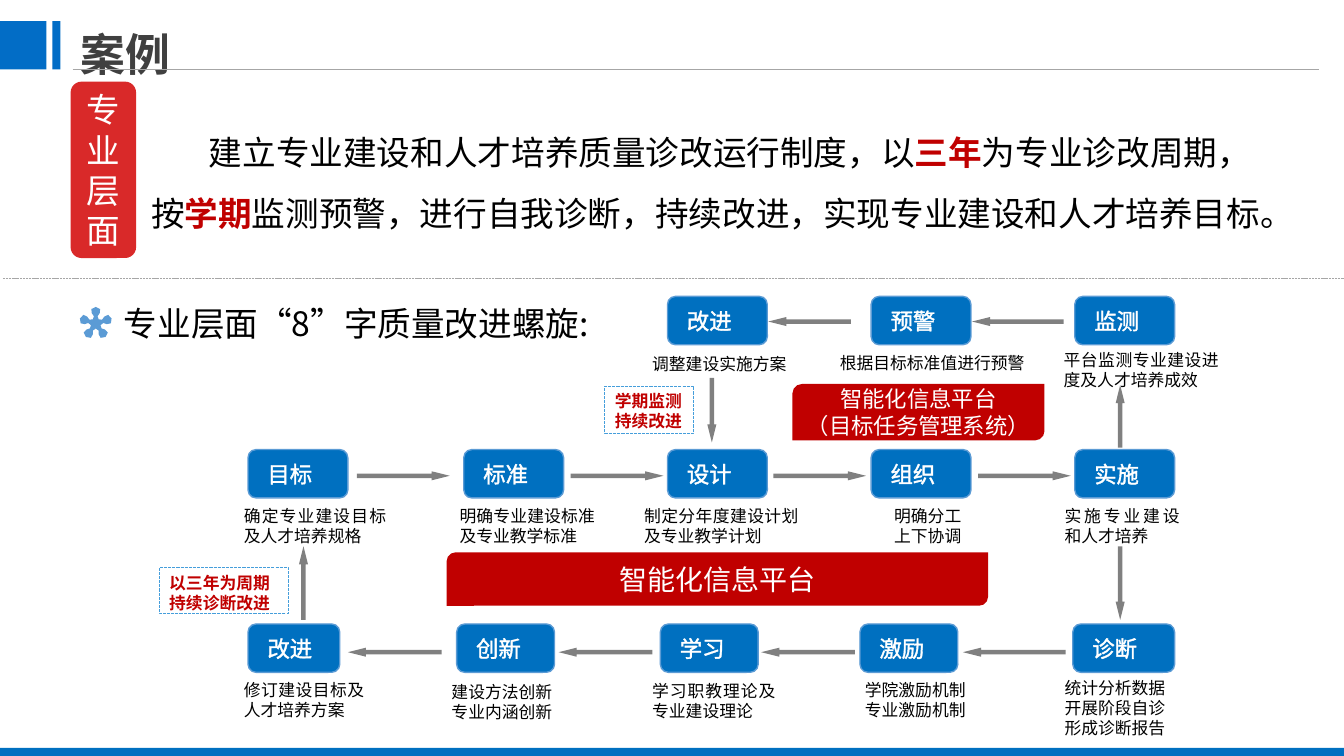
import math

import lxml.etree
import pptx
import pptx.dml.color
import pptx.enum.dml
import pptx.enum.shapes
import pptx.enum.text
import pptx.oxml.ns
import pptx.util

WIDTH, HEIGHT = 13.33, 7.5
FONT = "Noto Sans CJK SC"
COLORS = {
    "bar": "026DC6", "blue": "0070C0", "edge": "5B9BD5", "dash": "459EDB",
    "red": "C00000", "label": "D92929", "arrow": "808080", "rule": "A6A6A6",
    "title": "404040", "black": "000000", "white": "FFFFFF",
}
SHAPES = pptx.enum.shapes.MSO_SHAPE
ALIGN = pptx.enum.text.PP_ALIGN
ANCHOR = pptx.enum.text.MSO_ANCHOR
DASH = pptx.enum.dml.MSO_LINE.SQUARE_DOT
ARROWS = {"left": SHAPES.LEFT_ARROW, "right": SHAPES.RIGHT_ARROW,
          "up": SHAPES.UP_ARROW, "down": SHAPES.DOWN_ARROW}
COLUMN = 2.02
STEP_HEIGHT = 0.48


def color(name):
    return pptx.dml.color.RGBColor.from_string(COLORS[name])


def inches(values):
    return [pptx.util.Inches(value) for value in values]


def write(shape, paragraphs, size=12, fill="black", bold=False, align=None, anchor=ANCHOR.TOP,
          inset=(0.1, 0.05), wrap=True, spacing=None, indent=None, outline=None):
    frame = shape.text_frame
    frame.word_wrap = wrap
    frame.auto_size = pptx.enum.text.MSO_AUTO_SIZE.NONE
    frame.vertical_anchor = anchor
    frame.margin_left = frame.margin_right = pptx.util.Inches(inset[0])
    frame.margin_top = frame.margin_bottom = pptx.util.Inches(inset[1])
    for index, spans in enumerate(paragraphs):
        para = frame.add_paragraph() if index else frame.paragraphs[0]
        para.alignment = align
        para.line_spacing = spacing
        if indent:
            para._p.get_or_add_pPr().set("indent", str(pptx.util.Inches(indent)))
        for part in [spans] if isinstance(spans, str) else spans:
            text, strong = (part, False) if isinstance(part, str) else part
            span = para.add_run()
            span.text = text
            span.font.size = pptx.util.Pt(size)
            span.font.name = FONT
            span.font.bold = bold or strong
            span.font.color.rgb = color("red" if strong else fill)
            properties = span._r.get_or_add_rPr()
            east = lxml.etree.Element(pptx.oxml.ns.qn("a:ea"), typeface=FONT)
            properties.find(pptx.oxml.ns.qn("a:latin")).addnext(east)
            if outline:
                line = lxml.etree.Element(pptx.oxml.ns.qn("a:ln"), w=str(pptx.util.Pt(outline)))
                solid = lxml.etree.SubElement(line, pptx.oxml.ns.qn("a:solidFill"))
                lxml.etree.SubElement(solid, pptx.oxml.ns.qn("a:srgbClr"), val=COLORS[fill])
                properties.insert(0, line)


def add_text(slide, box, paragraphs, **style):
    shape = slide.shapes.add_textbox(*inches(box))
    write(shape, paragraphs, **style)


def add_box(slide, kind, box, fill=None, line=None, weight=0.75, dash=None):
    shape = slide.shapes.add_shape(kind, *inches(box))
    shape.shadow.inherit = False
    if fill:
        shape.fill.solid()
        shape.fill.fore_color.rgb = color(fill)
    else:
        shape.fill.background()
    if line:
        shape.line.color.rgb = color(line)
        shape.line.width = pptx.util.Pt(weight)
        shape.line.dash_style = dash
    else:
        shape.line.fill.background()
    return shape


def add_rule(slide, left, right, top, dash=None):
    rule = slide.shapes.add_connector(
        pptx.enum.shapes.MSO_CONNECTOR.STRAIGHT, *inches((left, top, right, top)))
    rule.line.color.rgb = color("rule")
    rule.line.width = pptx.util.Pt(0.5)
    rule.line.dash_style = dash
    lxml.etree.SubElement(rule._element.spPr, pptx.oxml.ns.qn("a:effectLst"))


def add_arrow(slide, direction, left, middle, length, thickness=0.09):
    if direction in ("left", "right"):
        box = (left, middle - thickness / 2, length, thickness)
    else:
        box = (left - thickness / 2, middle, thickness, length)
    arrow = add_box(slide, ARROWS[direction], box, "arrow")
    arrow.adjustments[0] = 0.5
    arrow.adjustments[1] = 2


def add_flower(slide, center_x, center_y):
    petal = [(-36, 0.05), (-14, 0.075), (-21, 0.11), (-17, 0.15),
             (0, 0.165), (17, 0.15), (21, 0.11), (14, 0.075)]
    points = []
    for index in range(5):
        for turn, radius in petal:
            angle = math.radians(72 * index - 90 + turn)
            points.append(inches((center_x + radius * math.cos(angle),
                                  center_y + radius * math.sin(angle))))
    builder = slide.shapes.build_freeform(*points[0], scale=1.0)
    builder.add_line_segments(points[1:], close=True)
    flower = builder.convert_to_shape()
    flower.shadow.inherit = False
    flower.fill.solid()
    flower.fill.fore_color.rgb = color("edge")
    flower.line.fill.background()


def header(slide, box):
    left, top, width, height = box
    add_rule(slide, left + 0.72, left + 13.08, top + height)
    for start, breadth in ((0, 0.46), (0.52, 0.08)):
        add_box(slide, SHAPES.RECTANGLE, (left + start, top, breadth, height), "bar")
    add_box(slide, SHAPES.RECTANGLE, (left, HEIGHT - 0.08, width, 0.08), "blue")
    title = slide.shapes.title
    title.left, title.top, title.width, title.height = inches((left + 0.7, top - 0.26, 1.1, 0.81))
    write(title, ["案例"], size=32, fill="title", bold=True, align=ALIGN.LEFT, wrap=False, spacing=1.5)


def summary(slide, box):
    left, top, width, height = box
    label = add_box(slide, SHAPES.ROUNDED_RECTANGLE, (left, top, 0.65, height), "label")
    write(label, ["专业层面"], size=24, fill="white", align=ALIGN.CENTER, anchor=ANCHOR.MIDDLE)
    add_text(slide, (left + 0.7, top + 0.25, width - 0.7, 1.31), [[
        " 建立专业建设和人才培养质量诊改运行制度，以", ("三年", True), "为专业诊改周期，按",
        ("学期", True), "监测预警，进行自我诊断，持续改进，实现专业建设和人才培养目标。",
    ]], size=24, spacing=1.5, indent=0.5)
    add_rule(slide, 0.03, WIDTH, top + 1.95, DASH)


def stage_row(slide, box, steps, direction, arrows, arrow_drop):
    left, top = box[:2]
    for column, shift, width, label, caption, caption_box, inset in steps:
        start = left + column * COLUMN
        step = add_box(slide, SHAPES.ROUNDED_RECTANGLE,
                       (start + shift, top, width, STEP_HEIGHT), "blue", "edge", 1)
        write(step, [" " + label], size=16, fill="white", align=ALIGN.LEFT, anchor=ANCHOR.MIDDLE,
              inset=(0.12, 0), wrap=False, outline=0.73)
        offset, drop, breadth = caption_box
        add_text(slide, (start + offset, top + drop, breadth, 0.4), caption,
                 align=ALIGN.JUSTIFY, inset=inset)
    for start, length in arrows:
        add_arrow(slide, direction, left + start, top + arrow_drop, length)


def callouts(slide, box):
    left, top = box[:2]
    notes = [((-1, 2.69, 1.28, 0.46), ["以三年为周期", "持续诊断改进"]),
             ((3.42, 0.89, 0.88, 0.47), ["学期监测", "持续改进"])]
    banners = [((5.28, 0.87, 2.5, 0.56), ["智能化信息平台", "（目标任务管理系统）"], 16),
               ((1.85, 2.54, 5.37, 0.53), ["智能化信息平台"], 20)]
    for (x, y, width, height), lines in notes:
        note = add_box(slide, SHAPES.RECTANGLE, (left + x, top + y, width, height),
                       line="dash", dash=DASH)
        write(note, lines, fill="red", bold=True, align=ALIGN.JUSTIFY)
    for (x, y, width, height), lines, size in banners:
        banner = add_box(slide, SHAPES.ROUND_2_DIAG_RECTANGLE,
                         (left + x, top + y, width, height), "red")
        write(banner, lines, size=size, fill="white", align=ALIGN.CENTER,
              anchor=ANCHOR.MIDDLE, inset=(0, 0))


def spiral(slide, box):
    left, top, width, height = box
    callouts(slide, box)
    normal, flat, tight = (0.1, 0.05), (0.1, 0), (0, 0)
    monitor = [
        (2, 0, 0.99, "改进", ["调整建设实施方案"], (-0.25, 0.52, 1.64), normal),
        (3, 0, 0.99, "预警", ["根据目标标准值进行预警"], (-0.31, 0.56, 1.9), tight),
        (4, 0, 0.99, "监测", ["平台监测专业建设进度及人才培养成效"], (-0.11, 0.53, 1.54), tight)]
    plan = [
        (0, -0.12, 0.99, "目标", ["确定专业建设目标及人才培养规格"], (-0.26, 0.51, 1.61), normal),
        (1, 0, 0.99, "标准", ["明确专业建设标准及专业教学标准"], (-0.14, 0.51, 1.54), normal),
        (2, 0, 0.99, "设计", ["制定分年度建设计划及专业教学计划"], (-0.33, 0.51, 1.73), normal),
        (3, 0, 0.99, "组织", ["明确分工", "上下协调"], (0.13, 0.51, 0.99), normal),
        (4, 0, 0.99, "实施", ["实施专业建设和人才培养"], (-0.2, 0.51, 1.34), normal)]
    review = [
        (0, -0.12, 0.91, "改进", ["修订建设目标及人才培养方案"], (-0.26, 0.55, 1.39), flat),
        (1, -0.07, 0.97, "创新", ["建设方法创新", "专业内涵创新"], (-0.22, 0.52, 1.23), normal),
        (2, -0.07, 0.97, "学习", ["学习职教理论及专业建设理论"], (-0.25, 0.51, 1.42), normal),
        (3, -0.11, 0.97, "激励", ["学院激励机制", "专业激励机制"], (-0.16, 0.5, 1.53), normal),
        (4, -0.02, 1.01, "诊断", ["统计分析数据", "开展阶段自诊", "形成诊断报告"],
         (-0.2, 0.48, 1.34), normal)]
    stage_row(slide, (left, top, width, 1), monitor, "left", [(5.04, 0.82), (7.06, 0.91)], 0.25)
    stage_row(slide, (left, top + 1.52, width, 1), plan, "right",
              [(0.96, 0.92), (3.08, 0.92), (5.09, 0.92), (7.12, 0.92)], 0.26)
    stage_row(slide, (left, top + 3.25, width, 1), review, "left",
              [(0.87, 0.93), (2.96, 0.93), (4.97, 0.93), (6.97, 1.02)], 0.28)
    for direction, x, y, length in (("down", 4.48, 0.81, 0.64), ("up", 8.53, 0.88, 0.62),
                                    ("up", 0.43, 2.48, 0.73), ("down", 8.53, 2.48, 0.73)):
        add_arrow(slide, direction, left + x, top + y, length)
    add_flower(slide, left - 1.63, top + 0.27)
    add_text(slide, (left - 1.45, top + 0.02, 4.86, 0.5), ["专业层面“8”字质量改进螺旋:"], size=24)


def main():
    deck = pptx.Presentation()
    deck.slide_width, deck.slide_height = inches((WIDTH, HEIGHT))
    slide = deck.slides.add_slide(deck.slide_layouts[5])
    header(slide, (0, 0.21, WIDTH, 0.48))
    summary(slide, (0.7, 0.81, 11.97, 1.75))
    spiral(slide, (2.58, 2.94, 9.5, 4.4))
    deck.save("out.pptx")


if __name__ == "__main__":
    main()
